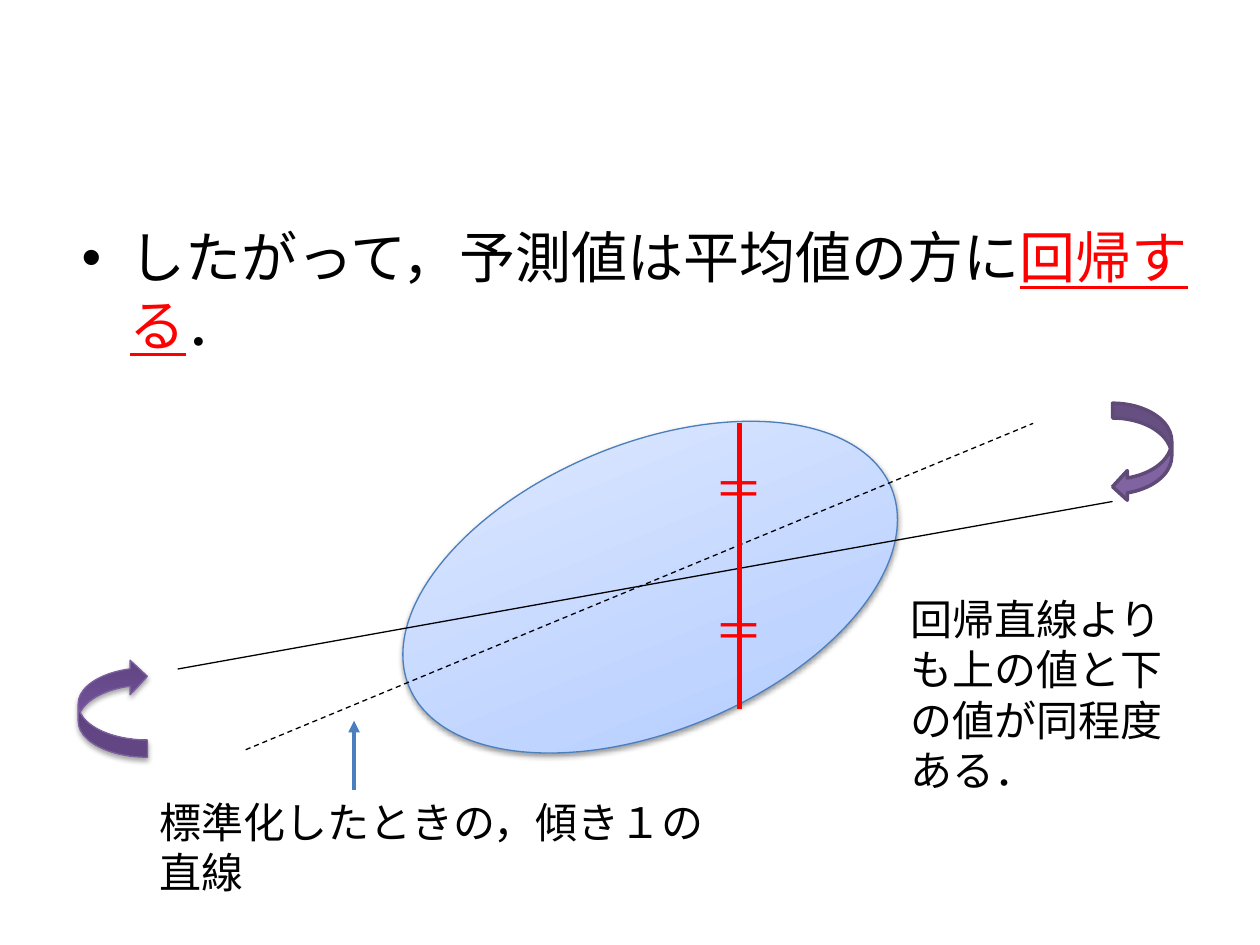
"""Build a slide on regression toward the mean."""
from lxml import etree
from pptx import Presentation
from pptx.dml.color import RGBColor
from pptx.enum.dml import MSO_LINE
from pptx.enum.shapes import MSO_CONNECTOR, MSO_SHAPE
from pptx.oxml.ns import qn
from pptx.util import Inches, Pt

STRAIGHT = MSO_CONNECTOR.STRAIGHT
ELLIPSE = MSO_SHAPE.OVAL
TURN = MSO_SHAPE.CURVED_LEFT_ARROW
DASH = MSO_LINE.DASH

FONT = "Calibri"
BLACK = RGBColor(0x00, 0x00, 0x00)
RED = RGBColor(0xFF, 0x00, 0x00)
BLUE = RGBColor(0x4B, 0x7E, 0xBC)
PURPLE = RGBColor(0x80, 0x64, 0xA2)
PURPLE_EDGE = RGBColor(0x7D, 0x60, 0xA0)
PURPLE_DARK = RGBColor(0x5F, 0x4A, 0x78)
SKY = [(0, RGBColor(0xA4, 0xC4, 0xFF)), (35, RGBColor(0xBF, 0xD4, 0xFF)),
       (100, RGBColor(0xE6, 0xEE, 0xFF))]
VIOLET = [(0, RGBColor(0x5F, 0x44, 0x80)), (80, RGBColor(0x7B, 0x58, 0xA6)),
          (100, RGBColor(0x7C, 0x57, 0xA8))]


def add(parent, tag, **attrs):
    return etree.SubElement(parent, qn(tag), {k: str(v) for k, v in attrs.items()})


class Deck:
    def __init__(self):
        self.prs = Presentation()
        self.prs.slide_width, self.prs.slide_height = Inches(10), Inches(7.5)
        self.s = self.prs.slides.add_slide(self.prs.slide_layouts[6])

    def text(self, x, y, w, h, runs, size, color=BLACK, wrap=True):
        tf = self.s.shapes.add_textbox(Inches(x), Inches(y), Inches(w), Inches(h)).text_frame
        tf.word_wrap = wrap
        p = tf.paragraphs[0]
        p.font.size, p.font.name, p.font.color.rgb = Pt(size), FONT, color
        for words, marked in runs:
            r = p.add_run()
            r.text = words
            r.font.size, r.font.name = Pt(size), FONT
            r.font.color.rgb = RED if marked else color
            if marked:
                r.font.underline = True
        return p

    def bullet(self, x, y, w, h, runs, size):
        p = self.text(x, y, w, h, runs, size)
        p.space_before = Pt(size * 0.2)
        pPr = p._p.get_or_add_pPr()
        pPr.set("marL", str(Inches(0.38)))
        pPr.set("indent", str(Inches(-0.38)))
        bullet_font = etree.Element(qn("a:buFont"), typeface="Arial")
        bullet_char = etree.Element(qn("a:buChar"), char="•")
        pPr.find(qn("a:spcBef")).addnext(bullet_font)
        bullet_font.addnext(bullet_char)

    def line(self, x1, y1, x2, y2, color=BLACK, width=0.75, dash=None, arrow=False):
        c = self.s.shapes.add_connector(STRAIGHT, Inches(x1), Inches(y1), Inches(x2), Inches(y2))
        c.line.color.rgb, c.line.width = color, Pt(width)
        if dash:
            c.line.dash_style = dash
        if arrow:
            add(c.line._get_or_add_ln(), "a:tailEnd", type="triangle")
        add(c._element.spPr, "a:effectLst")

    def shape(self, kind, x, y, w, h, edge, width=0.75, rotation=0):
        sp = self.s.shapes.add_shape(kind, Inches(x), Inches(y), Inches(w), Inches(h))
        sp.shadow.inherit = False
        sp.rotation = rotation
        sp.line.color.rgb, sp.line.width = edge, Pt(width)
        return sp

    def solid(self, sp, color):
        sp.fill.solid()
        sp.fill.fore_color.rgb = color

    def gradient(self, sp, stops):
        sp.fill.gradient()
        sp.fill.gradient_angle = 90
        grad = sp._element.spPr.find(qn("a:gradFill"))
        grad.find(qn("a:lin")).set("ang", str(270 * 60000))
        gs_list = grad.find(qn("a:gsLst"))
        for old in list(gs_list):
            gs_list.remove(old)
        for pos, color in stops:
            add(add(gs_list, "a:gs", pos=pos * 1000), "a:srgbClr", val=color)

    def shadow(self, sp, alpha, distance):
        effects = sp._element.spPr.find(qn("a:effectLst"))
        outer = add(effects, "a:outerShdw", blurRad=Pt(3.1), dist=Pt(distance),
                    dir=90 * 60000, rotWithShape=0)
        add(add(outer, "a:srgbClr", val=BLACK), "a:alpha", val=alpha * 1000)


def main():
    d = Deck()
    d.bullet(0.55, 1.72, 9, 4.95, [("したがって，予測値は平均値の方に", False),
                                   ("回帰する", True), ("．", False)], 32)

    scatter = d.shape(ELLIPSE, 3.09, 3.52, 4.14, 2.28, BLUE, rotation=337.6)
    d.gradient(scatter, SKY)
    d.shadow(scatter, 38, 1.6)
    d.line(1.95, 5.95, 8.2, 3.36, dash=DASH)
    d.line(1.41, 5.31, 8.83, 3.98)

    left_turn = d.shape(TURN, 0.62, 5.23, 0.55, 0.78, PURPLE_EDGE, rotation=180)
    d.gradient(left_turn, VIOLET)
    d.shadow(left_turn, 35, 1.8)
    right_turn = d.shape(TURN, 8.83, 3.2, 0.47, 0.78, PURPLE_DARK, width=2)
    d.solid(right_turn, PURPLE)

    d.text(7.13, 4.66, 2.47, 1.31, [("回帰直線よりも上の値と下の値が同程度ある．", False)], 24)
    d.line(5.87, 3.36, 5.87, 5.63, RED, 3)
    for y in (3.59, 4.72):
        d.text(5.57, y, 0.59, 0.57, [("＝", False)], 28, RED, wrap=False)
    d.text(1.17, 6.27, 4.74, 0.5, [("標準化したときの，傾き１の直線", False)], 24)
    d.line(2.81, 6.27, 2.81, 5.72, BLUE, 2.25, arrow=True)
    d.prs.save("out.pptx")


if __name__ == "__main__":
    main()
